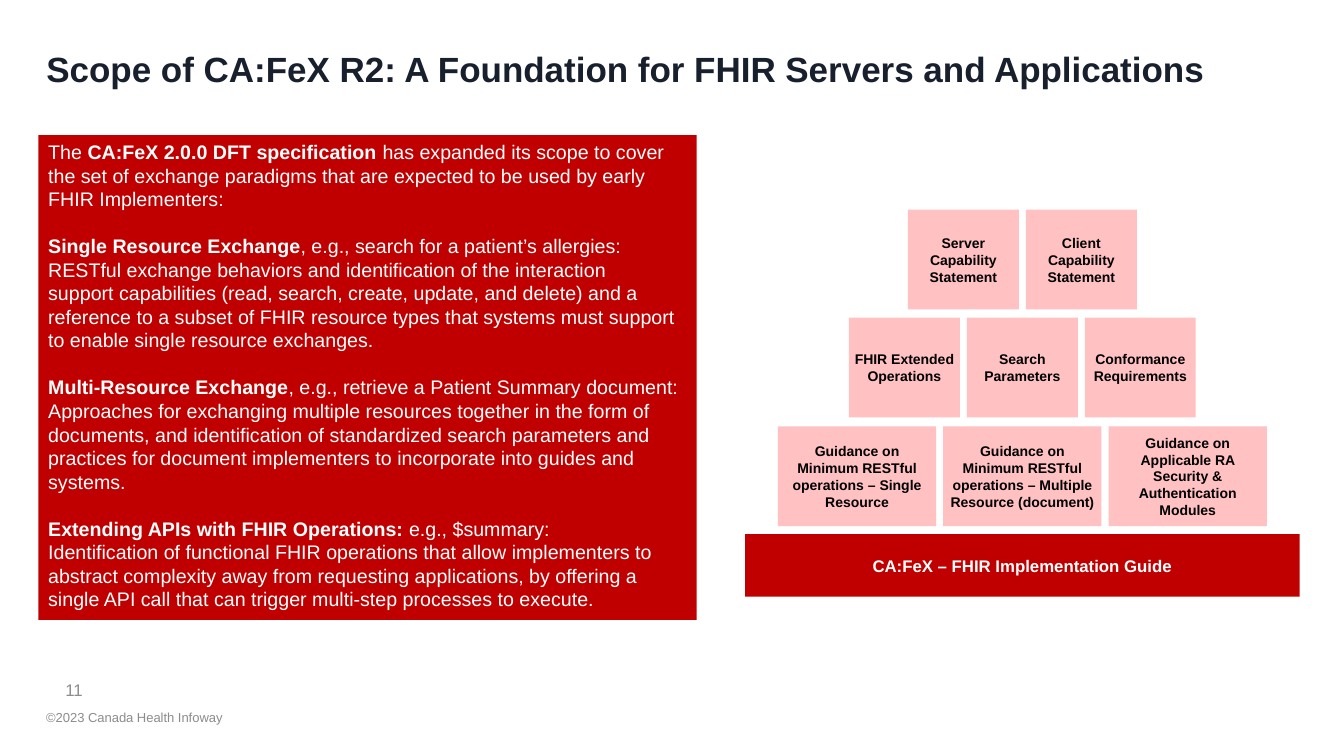
from pptx import Presentation
from pptx.dml.color import RGBColor
from pptx.enum import shapes, text
from pptx.util import Inches, Pt

RED = RGBColor(0xC0, 0x00, 0x00)
PINK = RGBColor(0xFF, 0xC1, 0xC2)
WHITE = RGBColor(0xFF, 0xFF, 0xFF)
BLACK = RGBColor(0x00, 0x00, 0x00)
NAVY = RGBColor(0x18, 0x1F, 0x2D)
GREY = RGBColor(0x8C, 0x8C, 0x8C)


class Page:
    font = "Arial"

    def __init__(self, deck):
        self.slide = deck.slides.add_slide(deck.slide_layouts[6])

    def fill_text(self, shape, paras, size, color, inset=(0.1, 0.05),
                  align=text.PP_ALIGN.LEFT, anchor=text.MSO_ANCHOR.MIDDLE):
        """Each paragraph is (space before, [(words, bold), ...])."""
        frame = shape.text_frame
        frame.word_wrap = True
        frame.vertical_anchor = anchor
        frame.margin_left = frame.margin_right = Inches(inset[0])
        frame.margin_top = frame.margin_bottom = Inches(inset[1])
        for i, (gap, runs) in enumerate(paras):
            para = frame.add_paragraph() if i else frame.paragraphs[0]
            para.alignment = align
            para.space_before = Pt(gap)
            for words, bold in runs:
                for j, line in enumerate(words.split("\n")):
                    if j:
                        para.add_line_break()
                    run = para.add_run()
                    run.text = line
                    run.font.name = self.font
                    run.font.size = Pt(size)
                    run.font.bold = bold
                    run.font.color.rgb = color

    def label(self, at, words, size, color, bold=False, inset=(0.1, 0.05)):
        box = self.slide.shapes.add_textbox(*map(Inches, at))
        self.fill_text(box, [(0, [(words, bold)])], size, color, inset)

    def rect(self, at, fill):
        box = self.slide.shapes.add_shape(
            shapes.MSO_SHAPE.RECTANGLE, *map(Inches, at))
        box.shadow.inherit = False
        box.fill.solid()
        box.fill.fore_color.rgb = fill
        box.line.fill.background()
        return box

    def panel(self, at, paras, size):
        self.fill_text(self.rect(at, RED), paras, size, WHITE,
                       anchor=text.MSO_ANCHOR.TOP)

    def block(self, at, words, size, fill, color):
        self.fill_text(self.rect(at, fill), [(0, [(words, True)])], size,
                       color, (0.05, 0.05), text.PP_ALIGN.CENTER)

    def tier(self, top, width, names, mid=10.14, gap=0.07):
        """A row of equal blocks centred on mid."""
        step = width + gap
        left = mid - (len(names) * step - gap) / 2
        for i, name in enumerate(names):
            self.block((left + i * step, top, width, 0.99), name, 10,
                       PINK, BLACK)


SCOPE = [
    (0, [("The ", False), ("CA:FeX 2.0.0 DFT specification ", True),
         ("has expanded its scope to cover the set of exchange paradigms "
          "that are expected to be used by early FHIR Implementers:", False)]),
    (16.8, [("Single Resource Exchange", True),
            (", e.g., search for a patient’s allergies: RESTful exchange "
             "behaviors and identification of the interaction\nsupport "
             "capabilities (read, search, create, update, and delete) and a "
             "reference to a subset of FHIR resource types that systems must "
             "support to enable single resource exchanges.", False)]),
    (16.8, [("Multi-Resource Exchange", True),
            (", e.g., retrieve a Patient Summary document: Approaches for "
             "exchanging multiple resources together in the form of "
             "documents, and identification of standardized search "
             "parameters and practices for document implementers to "
             "incorporate into guides and systems.", False)]),
    (16.8, [("Extending APIs with FHIR Operations: ", True),
            ("e.g., $summary:", False)]),
    (0, [("Identification of functional FHIR operations that allow "
          "implementers to abstract complexity away from requesting "
          "applications, by offering a single API call that can trigger "
          "multi-step processes to execute.", False)]),
]

TIERS = [
    (2.08, 1.1, ["Server Capability Statement",
                 "Client Capability Statement"]),
    (3.15, 1.1, ["FHIR Extended Operations", "Search Parameters",
                 "Conformance Requirements"]),
    (4.23, 1.57, [
        "Guidance on Minimum RESTful operations – Single Resource",
        "Guidance on Minimum RESTful operations – Multiple Resource "
        "(document)",
        "Guidance on Applicable RA Security & Authentication Modules"]),
]


def main():
    deck = Presentation()
    deck.slide_width, deck.slide_height = Inches(13.33), Inches(7.5)
    page = Page(deck)

    # Title
    page.label((0.4, 0.33, 12.65, 0.69),
               "Scope of CA:FeX R2: A Foundation for FHIR Servers and "
               "Applications", 25, NAVY, True, (0.06, 0.06))

    # Scope text
    page.panel((0.38, 1.34, 6.53, 4.81), SCOPE, 14)

    # Pyramid on its base
    for tier in TIERS:
        page.tier(*tier)
    page.block((7.39, 5.3, 5.5, 0.62), "CA:FeX – FHIR Implementation Guide",
               12, RED, WHITE)

    # Footer
    page.label((0.55, 6.64, 0.48, 0.4), "11", 12, GREY)
    page.label((0.36, 7.01, 2.67, 0.21), "©2023 Canada Health Infoway",
               9.3, GREY)

    deck.save("out.pptx")


if __name__ == "__main__":
    main()
